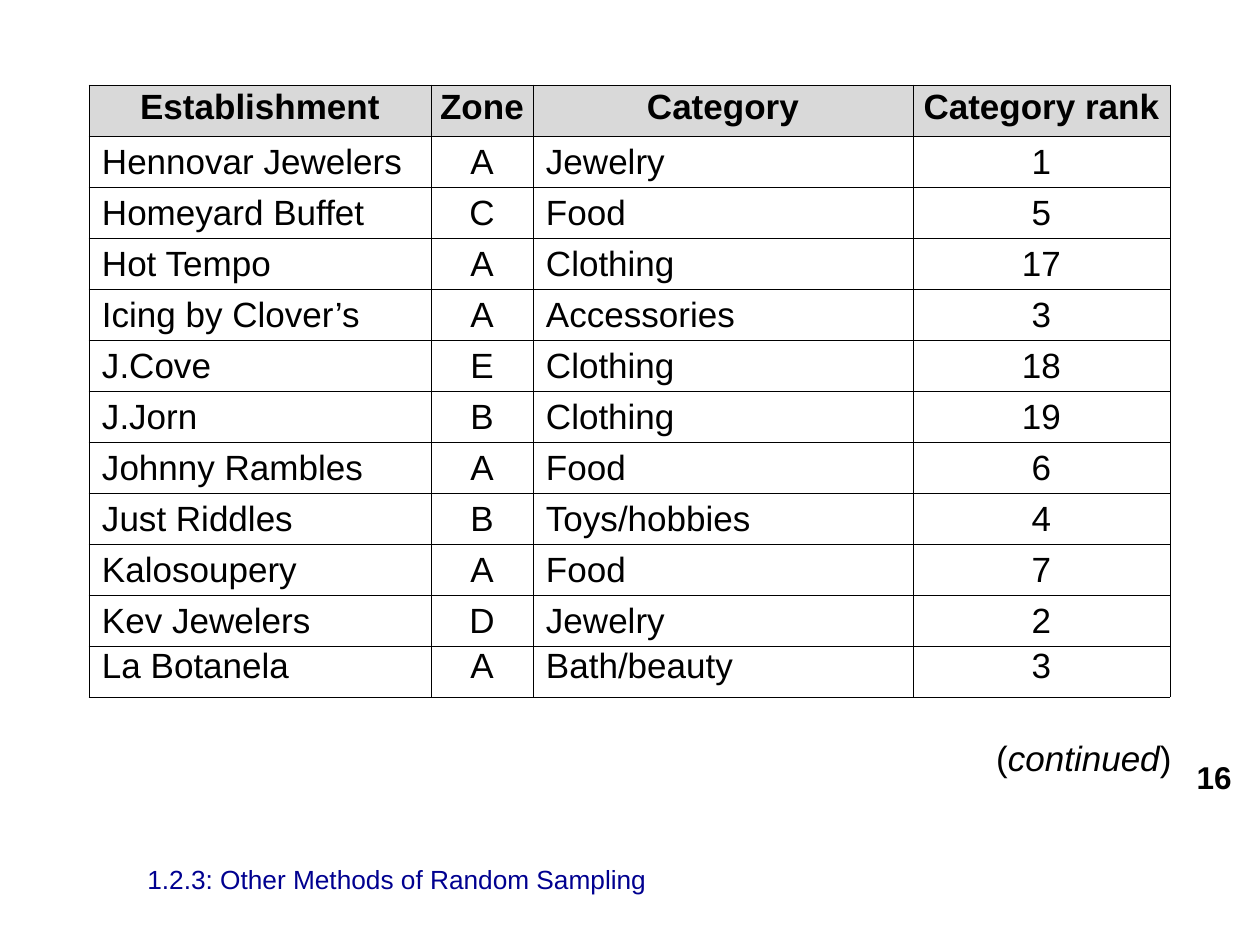
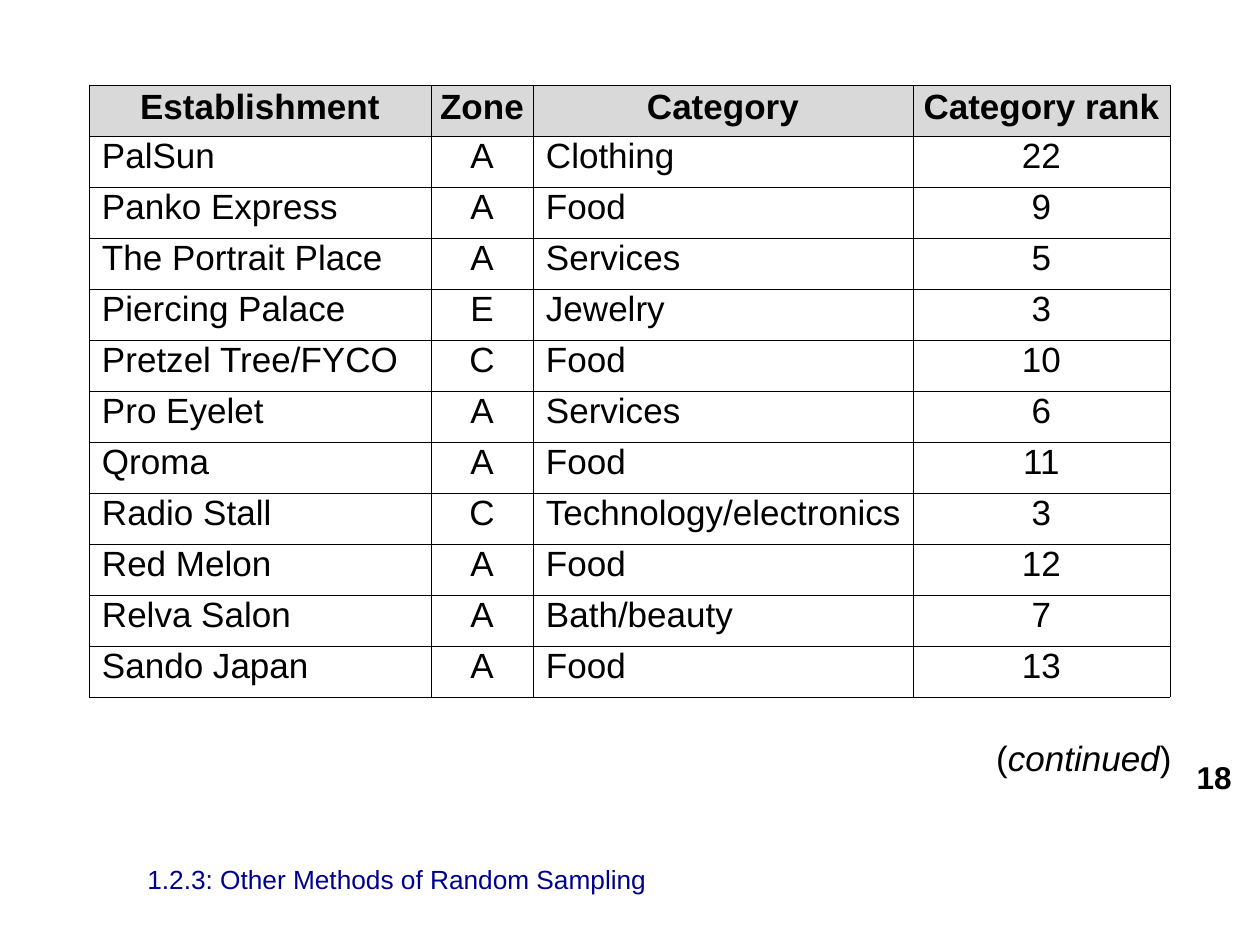
from lxml.etree import SubElement
from pptx import Presentation
from pptx.dml.color import RGBColor
from pptx.enum.text import MSO_ANCHOR as ANCHOR, PP_ALIGN as ALIGN
from pptx.oxml.ns import qn
from pptx.util import Emu, Pt

SCALE = 914400 / 126  # EMU in one px
FONT = "Arial"
BLACK = RGBColor(0x00, 0x00, 0x00)
WHITE = RGBColor(0xFF, 0xFF, 0xFF)
NAVY = RGBColor(0x00, 0x00, 0x90)
GRAY = RGBColor(0xD9, 0xD9, 0xD9)

FOOTER = "1.2.3: Other Methods of Random Sampling"
HEADER = ("Establishment", "Zone", "Category", "Category rank")
COL_WIDTHS = (342, 102, 380, 257)
ROW_HEIGHT = 51

# Page number, count of body rows centred vertically, body rows
PAGES = [
    (16, 10, [
        ("Hennovar Jewelers", "A", "Jewelry", 1),
        ("Homeyard Buffet", "C", "Food", 5),
        ("Hot Tempo", "A", "Clothing", 17),
        ("Icing by Clover’s", "A", "Accessories", 3),
        ("J.Cove", "E", "Clothing", 18),
        ("J.Jorn", "B", "Clothing", 19),
        ("Johnny Rambles", "A", "Food", 6),
        ("Just Riddles", "B", "Toys/hobbies", 4),
        ("Kalosoupery", "A", "Food", 7),
        ("Kev Jewelers", "D", "Jewelry", 2),
        ("La Botanela", "A", "Bath/beauty", 3),
    ]),
    (18, 0, [
        ("PalSun", "A", "Clothing", 22),
        ("Panko Express", "A", "Food", 9),
        ("The Portrait Place", "A", "Services", 5),
        ("Piercing Palace", "E", "Jewelry", 3),
        ("Pretzel Tree/FYCO", "C", "Food", 10),
        ("Pro Eyelet", "A", "Services", 6),
        ("Qroma", "A", "Food", 11),
        ("Radio Stall", "C", "Technology/electronics", 3),
        ("Red Melon", "A", "Food", 12),
        ("Relva Salon", "A", "Bath/beauty", 7),
        ("Sando Japan", "A", "Food", 13),
    ]),
]


def px(*lengths):
    return [Emu(round(n * SCALE)) for n in lengths]


def write(tf, text, size=20, color=BLACK, bold=False, align=ALIGN.LEFT, italic=()):
    """Write one paragraph; text may be a list of runs, italic lists run indexes."""
    p = tf.paragraphs[0]
    p.alignment = align
    for i, part in enumerate([text] if isinstance(text, str) else text):
        r = p.add_run()
        r.text = part
        r.font.name, r.font.size = FONT, Pt(size)
        r.font.bold, r.font.italic = bold, i in italic
        r.font.color.rgb = color


prs = Presentation()
prs.slide_width, prs.slide_height = px(1260, 945)

for number, centred_rows, rows in PAGES:
    s = prs.slides.add_slide(prs.slide_layouts[6])

    # Page number, footer and continuation note
    for box, anchor, text, fmt in [
        ((1143, 757, 101, 39), ANCHOR.MIDDLE, str(number),
         dict(size=18, bold=True, align=ALIGN.RIGHT)),
        ((135, 861, 791, 37), ANCHOR.MIDDLE, FOOTER, dict(size=15, color=NAVY)),
        ((780, 730, 404, 55), ANCHOR.TOP, ["(", "continued", ")"],
         dict(align=ALIGN.RIGHT, italic=(1,))),
    ]:
        tf = s.shapes.add_textbox(*px(*box)).text_frame
        tf.word_wrap = True
        tf.vertical_anchor = anchor
        write(tf, text, **fmt)

    # Table of establishments
    grid = [HEADER] + rows
    table = s.shapes.add_table(
        len(grid), len(HEADER),
        *px(89, 85, sum(COL_WIDTHS), ROW_HEIGHT * len(grid))).table
    table.horz_banding = False
    for column, width in zip(table.columns, px(*COL_WIDTHS)):
        column.width = width
    for i, row in enumerate(grid):
        table.rows[i].height = px(ROW_HEIGHT)[0]
        head = i == 0
        for j, value in enumerate(row):
            cell = table.cell(i, j)
            left = not head and j in (0, 2)
            cell.margin_left, cell.margin_right, cell.margin_top, cell.margin_bottom = px(
                13 if left else 1, 1, 0 if head else 1, 6 if head else 0)
            cell.vertical_anchor = ANCHOR.MIDDLE if i <= centred_rows else ANCHOR.TOP
            write(cell.text_frame, str(value), bold=head,
                  align=ALIGN.LEFT if left else ALIGN.CENTER)

            # Thin black borders, then the fill
            tcPr = cell._tc.get_or_add_tcPr()
            for side in ("a:lnL", "a:lnR", "a:lnT", "a:lnB"):
                ln = SubElement(tcPr, qn(side), w=str(Pt(0.5)))
                SubElement(SubElement(ln, qn("a:solidFill")), qn("a:srgbClr"), val=str(BLACK))
            cell.fill.solid()
            cell.fill.fore_color.rgb = GRAY if head else WHITE

prs.save("out.pptx")
